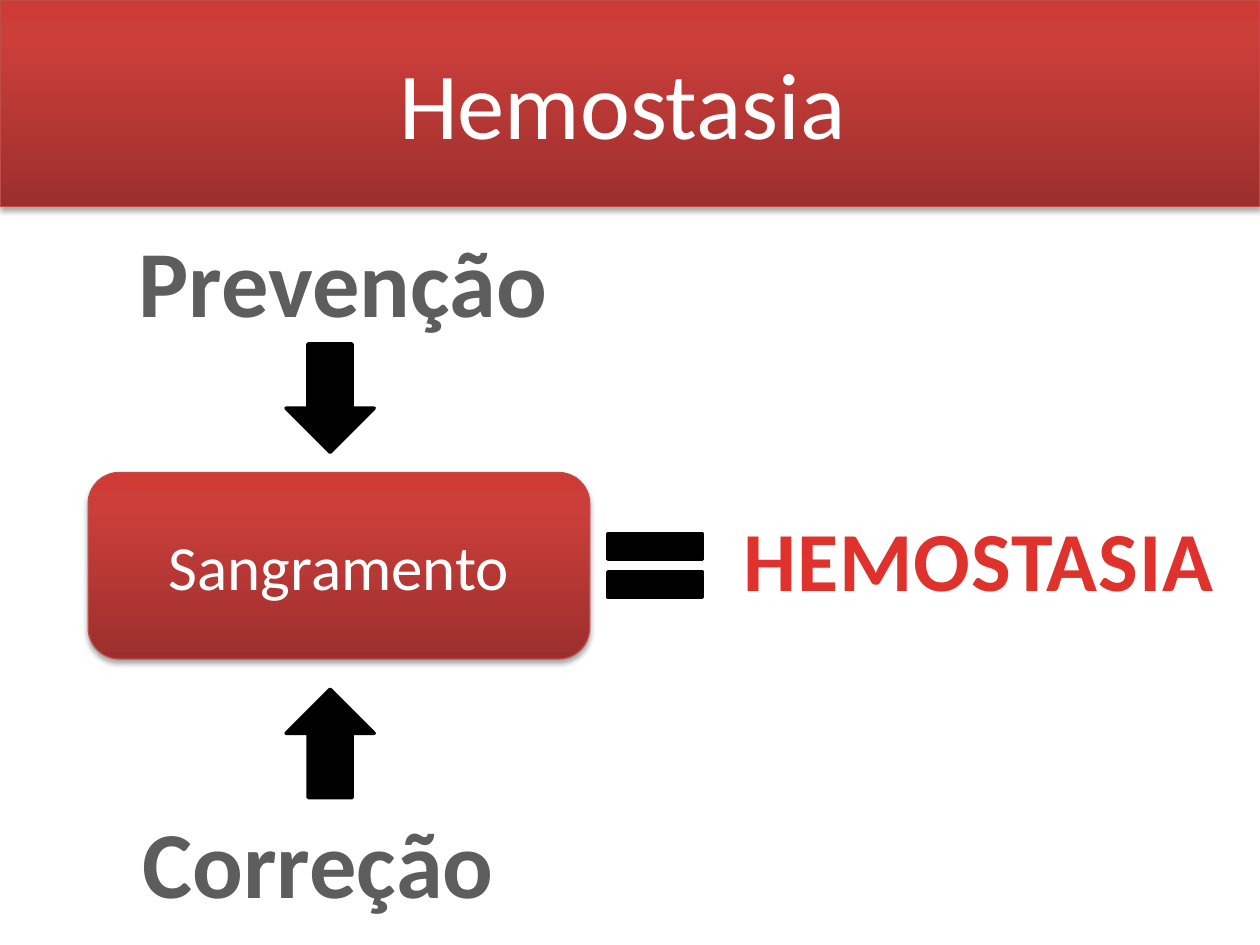
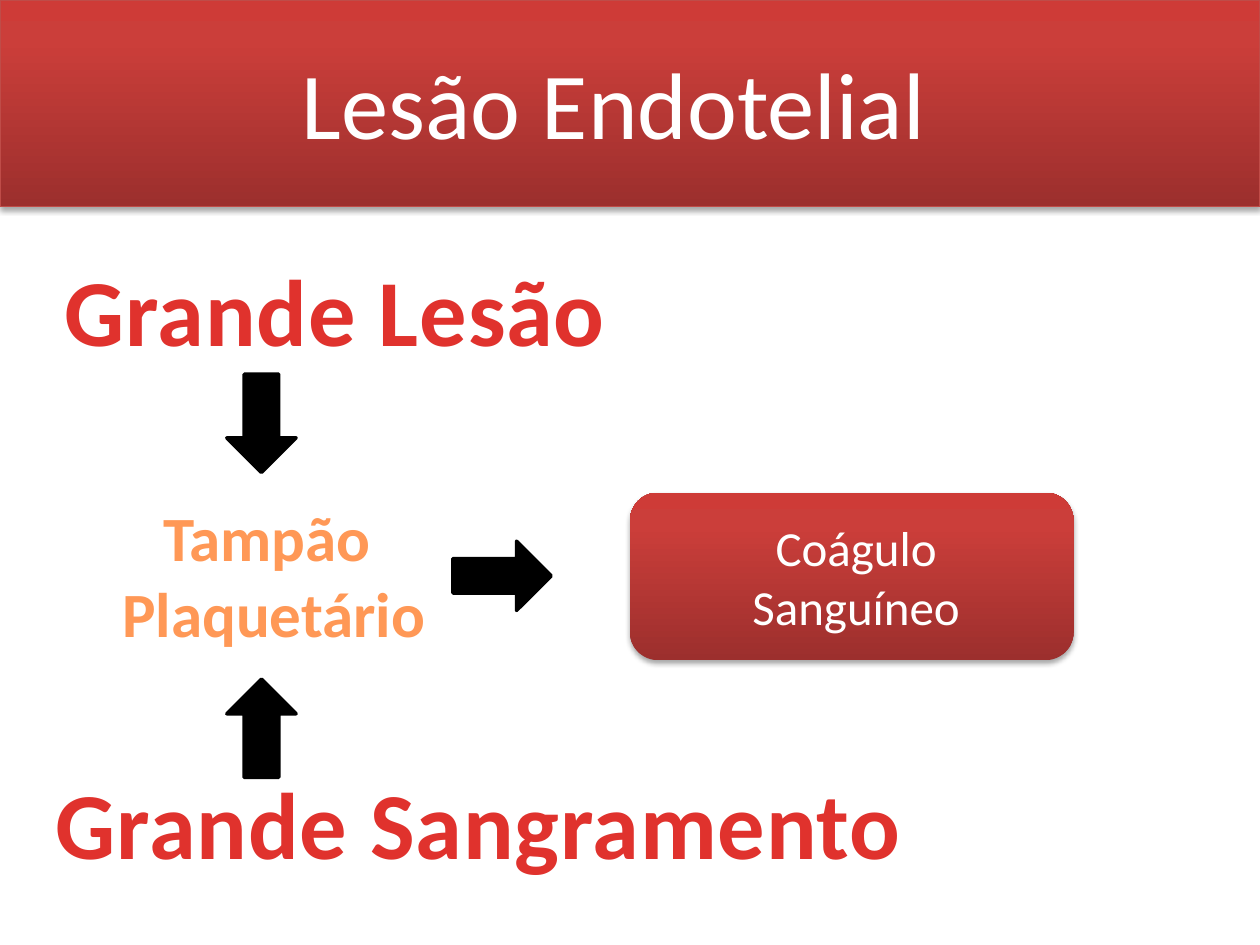
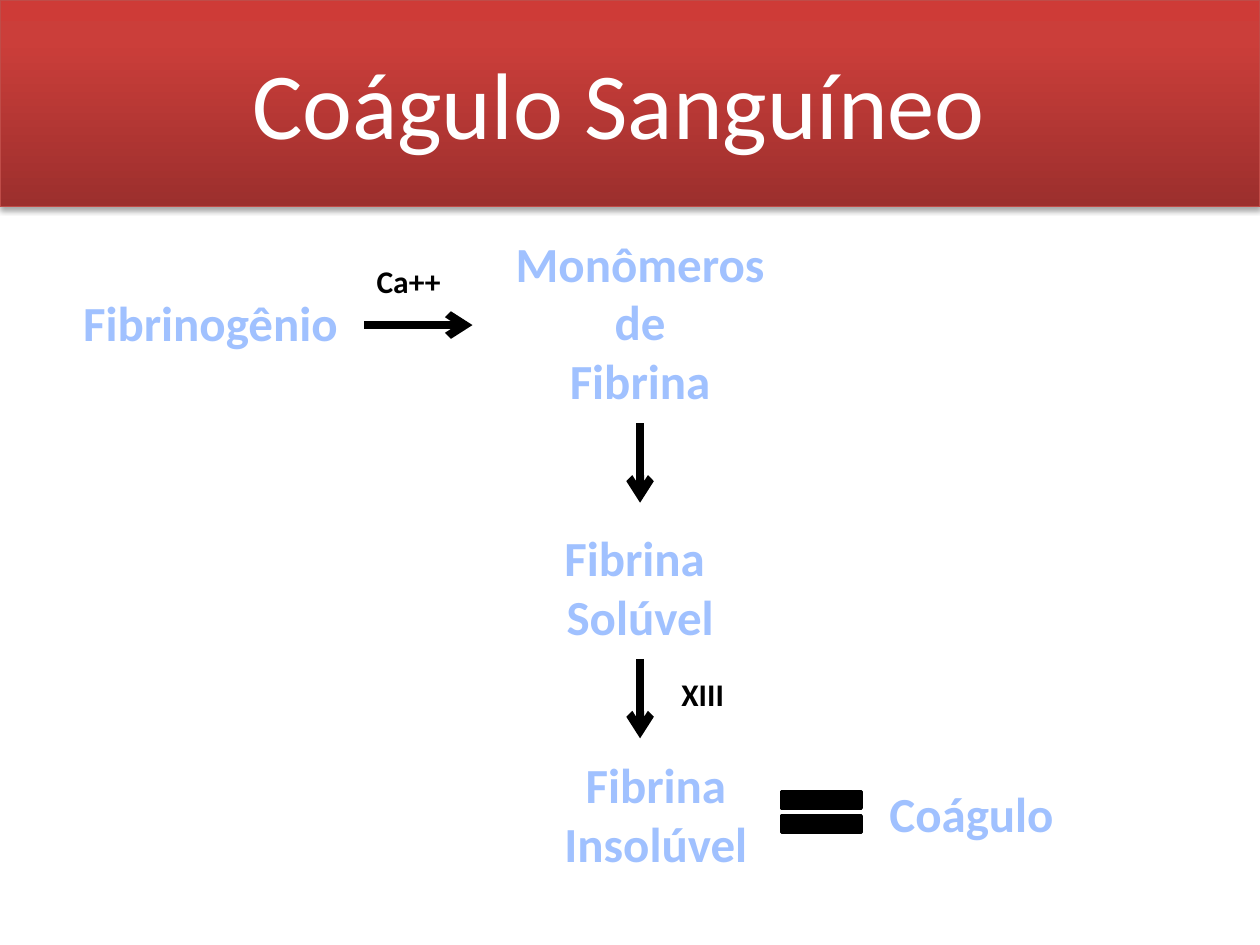
import pptx
import pptx.dml.color
import pptx.enum.shapes
import pptx.enum.text
import pptx.oxml
import pptx.oxml.ns
import pptx.util
from pptx.util import Inches

FONT = "Calibri"
WHITE, BLACK = "FFFFFF", "000000"
RED, GRAY, ORANGE, BLUE = "E0322D", "5D5D5D", "FF9856", "A0C1FF"
BORDER = "BF4C48"
GLOSS_STOPS = ((0, "9C2F2D"), (80, "CB3E3A"), (100, "CE3B37"))
DRAWING_NS = pptx.oxml.ns.nsdecls("a")

SHAPE = pptx.enum.shapes.MSO_SHAPE
ALIGN = pptx.enum.text.PP_ALIGN


def color(hex_code):
    return pptx.dml.color.RGBColor.from_string(hex_code)


def write(frame, lines, size, hex_code, bold=False, align=ALIGN.CENTER, spacing=0):
    """Fill a text frame with one paragraph per line; spacing is in points."""
    for index, line in enumerate(lines):
        para = frame.add_paragraph() if index else frame.paragraphs[0]
        para.text = line
        para.alignment = align
        para.font.name = FONT
        para.font.size = pptx.util.Pt(size)
        para.font.bold = bold
        para.font.color.rgb = color(hex_code)
        if spacing:
            para.font._element.set("spc", str(int(spacing * 100)))


def add_label(page, lines, area, size, hex_code, bold=True, wrap=False, **style):
    box = page.shapes.add_textbox(*map(Inches, area))
    box.text_frame.word_wrap = wrap
    box.text_frame.auto_size = pptx.enum.text.MSO_AUTO_SIZE.SHAPE_TO_FIT_TEXT
    write(box.text_frame, lines, size, hex_code, bold, **style)


def add_red_heading(page, text, area, size=54):
    add_label(page, [text], area, size, RED, spacing=0.5)


def add_note(page, text, area):
    add_label(page, [text], area, 18, BLACK, wrap=True, align=ALIGN.LEFT)


def add_glossy(page, kind, area, border=True):
    """Add a red gradient shape with a soft shadow below it."""
    shape = page.shapes.add_shape(kind, *map(Inches, area))
    shape.shadow.inherit = False
    properties = shape._element.spPr
    stops = "".join(
        f'<a:gs pos="{position * 1000}"><a:srgbClr val="{hex_code}"/></a:gs>'
        for position, hex_code in GLOSS_STOPS)
    gradient = pptx.oxml.parse_xml(
        f'<a:gradFill {DRAWING_NS} rotWithShape="1"><a:gsLst>{stops}</a:gsLst>'
        '<a:lin ang="16200000" scaled="0"/></a:gradFill>')
    properties.find(pptx.oxml.ns.qn("a:prstGeom")).addnext(gradient)
    properties.find(pptx.oxml.ns.qn("a:effectLst")).append(pptx.oxml.parse_xml(
        f'<a:outerShdw {DRAWING_NS} blurRad="40000" dist="23000" dir="5400000" '
        'rotWithShape="0"><a:srgbClr val="000000"><a:alpha val="35000"/>'
        '</a:srgbClr></a:outerShdw>'))
    if border:
        shape.line.color.rgb = color(BORDER)
        shape.line.width = pptx.util.Pt(0.75)
    else:
        shape.line.fill.background()
    return shape


def add_symbol(page, kind, area, rotation=0):
    """Add a solid black block arrow or equals sign."""
    symbol = page.shapes.add_shape(kind, *map(Inches, area))
    symbol.rotation = rotation
    symbol.shadow.inherit = False
    symbol.fill.solid()
    symbol.fill.fore_color.rgb = color(BLACK)
    symbol.line.color.rgb = color(BLACK)
    symbol.line.width = pptx.util.Pt(2)


def add_line_arrow(page, start, end):
    arrow = page.shapes.add_connector(
        pptx.enum.shapes.MSO_CONNECTOR.STRAIGHT, *map(Inches, start + end))
    arrow.line.color.rgb = color(BLACK)
    arrow.line.width = pptx.util.Pt(4.5)
    arrow.line._get_or_add_ln().append(
        pptx.oxml.parse_xml(f'<a:tailEnd {DRAWING_NS} type="arrow"/>'))
    arrow._element.spPr.append(pptx.oxml.parse_xml(f"<a:effectLst {DRAWING_NS}/>"))


def add_page(deck, title, left, width):
    """Add a slide with the red band and its title."""
    page = deck.slides.add_slide(deck.slide_layouts[6])
    add_glossy(page, SHAPE.RECTANGLE, (0, 0, 10, 1.64))
    add_label(page, [title], (left, 0.31, width, 1.01), 54, WHITE, bold=False)
    return page


def build_hemostasis(deck):
    page = add_page(deck, "Hemostasia", 3.05, 3.78)
    bleeding = add_glossy(page, SHAPE.ROUNDED_RECTANGLE, (0.7, 3.75, 3.98, 1.48))
    bleeding.text_frame.vertical_anchor = pptx.enum.text.MSO_ANCHOR.MIDDLE
    write(bleeding.text_frame, ["Sangramento"], 36, WHITE)
    bleeding.text_frame.paragraphs[0].font.bold = False
    add_label(page, ["Prevenção"], (1, 1.72, 3.44, 1.01), 54, GRAY)
    add_label(page, ["Correção"], (1.02, 6.33, 3.01, 1.01), 54, GRAY)
    for top, rotation in ((2.73, 0), (5.47, 180)):
        add_symbol(page, SHAPE.DOWN_ARROW, (2.27, top, 0.7, 0.86), rotation)
    add_symbol(page, SHAPE.MATH_EQUAL, (4.69, 4.06, 1.02, 0.86))
    add_red_heading(page, "HEMOSTASIA", (5.78, 3.98, 3.98, 0.91), 48)


def build_endothelial_injury(deck):
    page = add_page(deck, "Lesão Endotelial", 2.27, 5.2)
    add_red_heading(page, "Grande Lesão", (0.39, 1.95, 4.54, 1.01))
    add_red_heading(page, "Grande Sangramento", (0.31, 6.02, 6.98, 1.01))
    add_label(page, ["Tampão ", "Plaquetário"], (0.86, 3.91, 2.63, 1.31), 36, ORANGE)
    for left, top, rotation in ((1.8, 2.97, 0), (1.8, 5.39, 180), (3.71, 4.18, 270)):
        add_symbol(page, SHAPE.DOWN_ARROW, (left, top, 0.55, 0.78), rotation)
    add_glossy(page, SHAPE.FLOWCHART_ALTERNATE_PROCESS, (5, 3.91, 3.52, 1.33),
               border=False)
    add_label(page, ["Coágulo", "Sanguíneo"], (5.86, 4.06, 1.87, 1.04), 28, WHITE,
              bold=False)


def build_blood_clot(deck):
    page = add_page(deck, "Coágulo Sanguíneo", 1.87, 6.08)
    stages = (
        (["Fibrinogênio"], (0.55, 2.27, 2.24, 0.57)),
        (["Monômeros", "de", "Fibrina"], (3.98, 1.8, 2.2, 1.51)),
        (["Fibrina ", "Solúvel"], (4.37, 4.14, 1.42, 1.04)),
        (["Fibrina", "Insolúvel"], (4.37, 5.94, 1.67, 1.04)),
        (["Coágulo"], (6.95, 6.17, 1.52, 0.57)),
    )
    for lines, area in stages:
        add_label(page, lines, area, 28, BLUE)
    add_line_arrow(page, (2.89, 2.58), (3.75, 2.58))
    for top in (3.36, 5.23):
        add_line_arrow(page, (5.08, top), (5.08, top + 0.63))
    add_note(page, "Ca++", (2.89, 2.03, 0.78, 0.4))
    add_note(page, "XIII", (5.31, 5.31, 1.33, 0.4))
    add_symbol(page, SHAPE.MATH_EQUAL, (6.09, 6.17, 0.86, 0.55))


def main():
    deck = pptx.Presentation()
    deck.slide_width, deck.slide_height = Inches(10), Inches(7.5)
    build_hemostasis(deck)
    build_endothelial_injury(deck)
    build_blood_clot(deck)
    deck.save("out.pptx")


if __name__ == "__main__":
    main()
